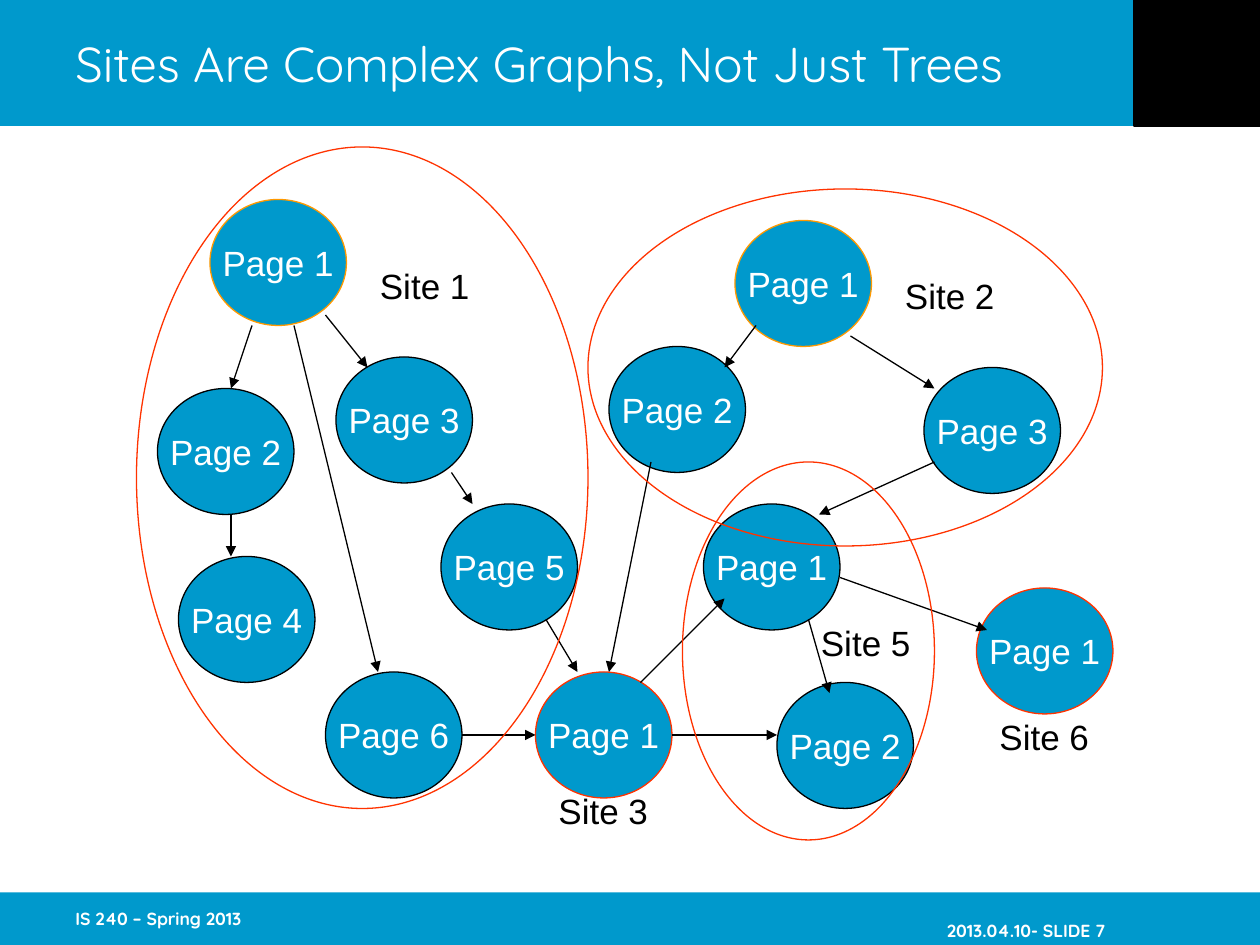
from lxml.etree import SubElement
from pptx import Presentation
from pptx.dml.color import RGBColor
from pptx.enum.shapes import MSO_CONNECTOR, MSO_SHAPE
from pptx.enum.text import MSO_ANCHOR, PP_ALIGN
from pptx.oxml.ns import qn
from pptx.util import Pt

hues = {"blue": "0099CC", "black": "000000", "white": "FFFFFF",
        "gold": "FF9900", "red": "FF3300"}


def write(shape, text, size=20, font="Arial", hue="black", bold=False,
          align=PP_ALIGN.LEFT, anchor=MSO_ANCHOR.MIDDLE, wrap=False,
          inset=(7.2, 3.6, 7.2, 3.6)):
    frame = shape.text_frame
    frame.word_wrap = wrap
    frame.vertical_anchor = anchor
    (frame.margin_left, frame.margin_top,
     frame.margin_right, frame.margin_bottom) = [Pt(side) for side in inset]
    para = frame.paragraphs[0]
    para.alignment = align
    run = para.add_run()
    run.text = text
    run.font.size = Pt(size)
    run.font.name = font
    run.font.bold = bold
    run.font.color.rgb = RGBColor.from_string(hues[hue])


def draw(kind, box, fill=None, line=None):
    shape = slide.shapes.add_shape(kind, *[Pt(num) for num in box])
    shape.shadow.inherit = False
    if fill:
        shape.fill.solid()
        shape.fill.fore_color.rgb = RGBColor.from_string(hues[fill])
    else:
        shape.fill.background()
    if line:
        shape.line.color.rgb = RGBColor.from_string(hues[line])
        shape.line.width = Pt(0.75)
    else:
        shape.line.fill.background()
    return shape


deck = Presentation()
deck.slide_width, deck.slide_height = Pt(720), Pt(540)
slide = deck.slides.add_slide(deck.slide_layouts[6])

draw(MSO_SHAPE.RECTANGLE, (0, 0, 720, 72), "blue")
draw(MSO_SHAPE.RECTANGLE, (0, 510, 720, 30), "blue")
draw(MSO_SHAPE.RECTANGLE, (648, 0, 72, 72), "black", "black")

title = slide.shapes.add_textbox(Pt(36), Pt(0), Pt(612), Pt(72))
write(title, "Sites Are Complex Graphs, Not Just Trees", size=28,
      font="Quicksand", hue="white", wrap=True)
course = slide.shapes.add_textbox(Pt(36), Pt(510), Pt(150), Pt(30))
write(course, "IS 240 – Spring 2013", size=10, font="Quicksand",
      hue="white", bold=True, wrap=True, inset=(7.2, 3.6, 0, 3.6))
number = slide.shapes.add_textbox(Pt(534), Pt(510), Pt(150), Pt(30))
write(number, "2013.04.10- SLIDE 7", size=10, font="Quicksand",
      hue="white", bold=True, wrap=True, align=PP_ALIGN.RIGHT,
      inset=(0, 16.6, 52.5, 3.6))

pages = [
    (1, 120, 114, "gold"), (3, 192, 204, "black"), (2, 90, 222, "black"),
    (1, 306, 384, "red"), (2, 348, 198, "black"), (1, 420, 126, "gold"),
    (5, 252, 288, "black"), (6, 186, 384, "black"), (4, 102, 318, "black"),
    (1, 402, 288, "black"), (2, 444, 390, "black"), (1, 558, 336, "red"),
    (3, 528, 210, "black"),
]
for num, left, top, edge in pages:
    page = draw(MSO_SHAPE.OVAL, (left, top, 78, 72), "blue", edge)
    write(page, f"Page {num}", hue="white", align=PP_ALIGN.CENTER)

links = [
    (186, 180, 210, 210), (144, 186, 132, 222), (168, 186, 216, 384),
    (132, 294, 132, 318), (264, 420, 306, 420), (258, 270, 270, 288),
    (312, 354, 330, 384), (384, 420, 444, 420), (366, 390, 414, 342),
    (432, 186, 414, 210), (486, 192, 534, 222), (534, 264, 468, 294),
    (480, 330, 564, 360), (462, 354, 474, 396), (372, 264, 348, 384),
]
for ends in links:
    link = slide.shapes.add_connector(
        MSO_CONNECTOR.STRAIGHT, *[Pt(num) for num in ends])
    link.line.color.rgb = RGBColor.from_string(hues["black"])
    link.line.width = Pt(0.75)
    SubElement(link.line._get_or_add_ln(), qn("a:tailEnd"), type="triangle")
    SubElement(link._element.spPr, qn("a:effectLst"))

for ring in [(78, 84, 258, 378), (336, 108, 294, 204), (390, 264, 144, 216)]:
    draw(MSO_SHAPE.OVAL, ring, line="red")

sites = [(1, 210, 147.5), (2, 510, 153.5), (3, 312, 447.5),
         (5, 462, 351.5), (6, 564, 405.5)]
for num, left, top in sites:
    site = slide.shapes.add_textbox(Pt(left), Pt(top), Pt(65.5), Pt(31))
    write(site, f"Site {num}", anchor=MSO_ANCHOR.TOP)

deck.save("out.pptx")
